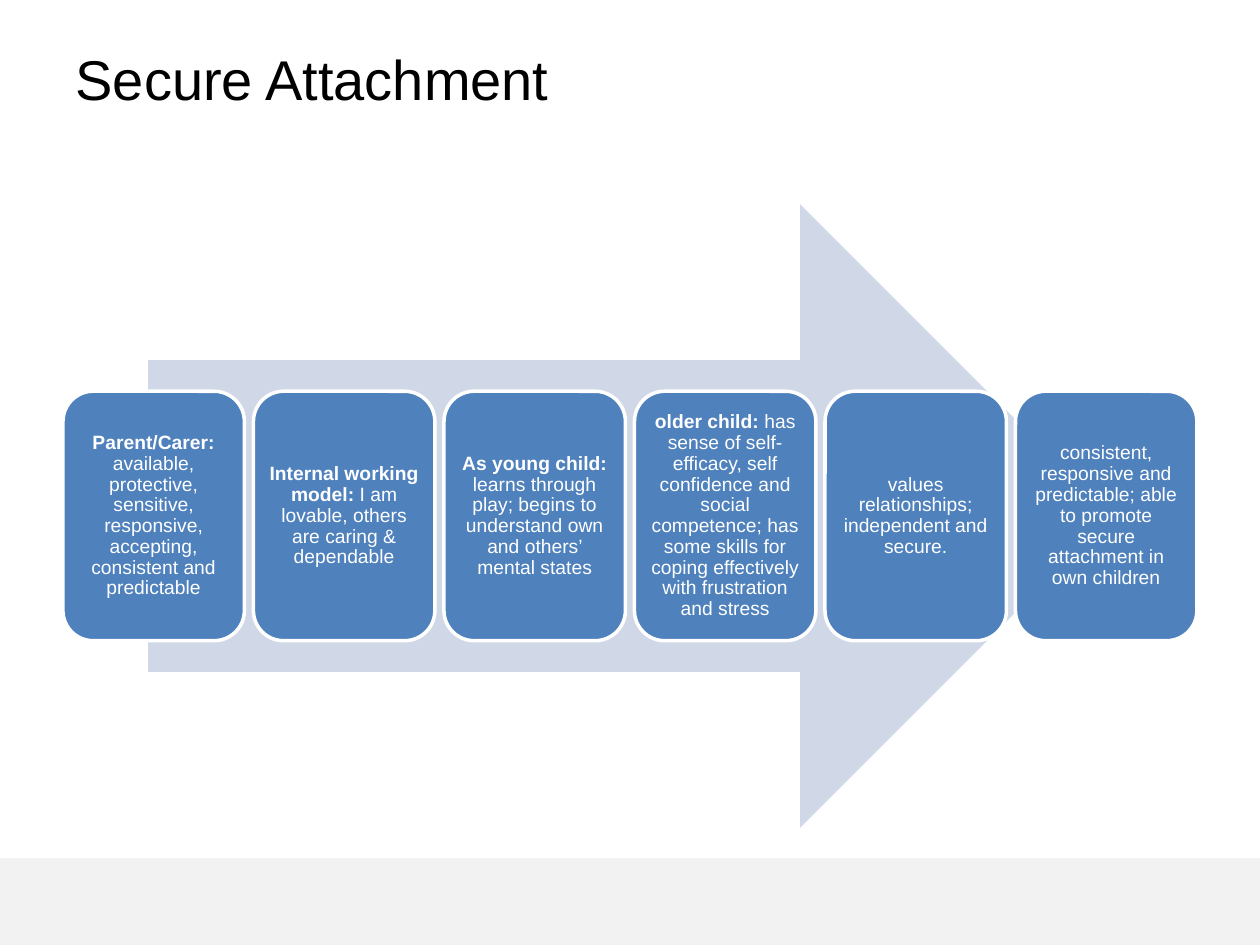
from pptx import Presentation
from pptx import util as u
from pptx.dml.color import RGBColor
from pptx.enum import shapes, text

WIDE, HIGH = u.Inches(10), u.Inches(7.5)
FONT = "Arial"
STAGES = [
    ("Parent/Carer:", " available, protective, sensitive, responsive, accepting, "
     "consistent and predictable"),
    ("Internal working model:", " I am lovable, others are caring & dependable"),
    ("As young child:", " learns through play; begins to understand own "
     "and others’ mental states"),
    ("older child: ", "has sense of self-efficacy, self confidence and social "
     "competence; has some skills for coping effectively with frustration and stress"),
    ("", "values relationships; independent and secure."),
    ("", "consistent, responsive and predictable; able to promote secure "
     "attachment in own children"),
]


def tint(code):
    """Turn a hex string into a colour."""
    return RGBColor.from_string(code)


def style(item, **vals):
    """Set each named format value on an item."""
    for name, val in vals.items():
        setattr(item, name, val)


def share(left, top, width, height):
    """Turn shares of the slide into a box of lengths."""
    return [round(n) for n in (left * WIDE, top * HIGH, width * WIDE, height * HIGH)]


def block(slide, kind, box, fill, edge=None):
    """Add a flat filled shape, with an edge if one is named."""
    shape = slide.shapes.add_shape(kind, *box)
    shape.shadow.inherit = False
    shape.fill.solid()
    shape.fill.fore_color.rgb = tint(fill)
    if edge:
        shape.line.color.rgb = tint(edge)
        shape.line.width = u.Pt(2)
    else:
        shape.line.fill.background()
    return shape


def write(para, words, size, color, bold=False):
    """Add a run of words to a paragraph."""
    run = para.add_run()
    run.text = words
    style(run.font, name=FONT, size=u.Pt(size), bold=bold)
    run.font.color.rgb = tint(color)


def title(slide, box, words):
    """Place and fill the title placeholder."""
    head = slide.shapes.title
    style(head, **dict(zip(("left", "top", "width", "height"), box)))
    style(head.text_frame, word_wrap=True, vertical_anchor=text.MSO_ANCHOR.TOP,
          auto_size=text.MSO_AUTO_SIZE.NONE)
    para = head.text_frame.paragraphs[0]
    para.alignment = text.PP_ALIGN.LEFT
    write(para, words, 32, "000000")


def card(slide, box, lead, body):
    """Add one rounded stage with a bold lead and plain body."""
    shape = block(slide, shapes.MSO_SHAPE.ROUNDED_RECTANGLE, box, "4F81BD", "FFFFFF")
    pad = u.Inches(0.05)
    style(shape.text_frame, word_wrap=True, vertical_anchor=text.MSO_ANCHOR.MIDDLE,
          margin_left=pad, margin_right=pad, margin_top=pad, margin_bottom=pad)
    para = shape.text_frame.paragraphs[0]
    style(para, alignment=text.PP_ALIGN.CENTER, line_spacing=0.9)
    if lead:
        write(para, lead, 11, "FFFFFF", True)
    write(para, body, 11, "FFFFFF")


def flow(slide, box, stages):
    """Lay a row of stages over a broad arrow within a box."""
    left, top, width, height = box
    arrow = [left + round(0.075 * width), top, round(0.85 * width), height]
    block(slide, shapes.MSO_SHAPE.RIGHT_ARROW, arrow, "D0D8E8")
    wide = round(0.16 * width)
    step = (width - wide) / (len(stages) - 1)
    for col, (lead, body) in enumerate(stages):
        spot = [left + round(col * step), top + round(0.3 * height),
                wide, round(0.4 * height)]
        card(slide, spot, lead, body)


def main():
    """Build and save the slide."""
    deck = Presentation()
    style(deck, slide_width=WIDE, slide_height=HIGH)
    slide = deck.slides.add_slide(deck.slide_layouts[5])
    block(slide, shapes.MSO_SHAPE.RECTANGLE, share(0, 0.908, 1, 0.092), "F2F2F2")
    flow(slide, share(0.05, 0.216, 0.9, 0.66), STAGES)
    title(slide, share(0.05, 0.04, 0.9, 0.167), "Secure Attachment")
    deck.save("out.pptx")


if __name__ == "__main__":
    main()
